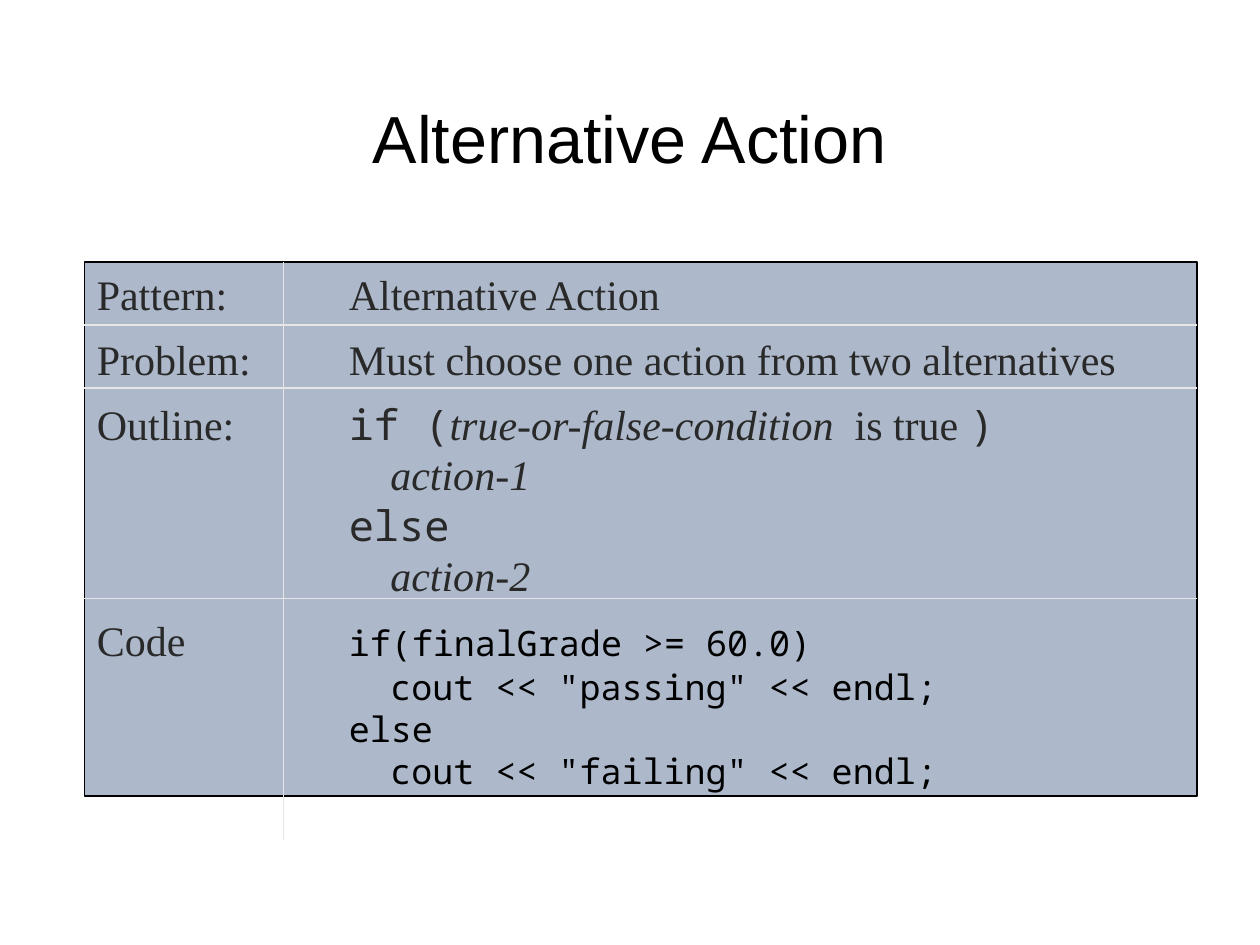
import pptx
import pptx.dml.color
import pptx.enum.shapes
import pptx.enum.text
import pptx.oxml.ns
import pptx.util
from pptx.util import Inches

COLORS = {"black": "000000", "ink": "292929", "panel": "ADB9CA", "rule": "E7E6E6"}
SERIF, MONO = "Times New Roman", "Noto Sans Mono"
LABEL = {"name": SERIF, "size": 24, "color": "ink"}
PLACEHOLDER = {**LABEL, "italic": True}
KEYWORD = {**LABEL, "name": MONO}
CODE = {"name": MONO, "size": 20, "color": "black"}
TITLE = {"name": "Arial", "size": 38, "color": "black"}
LEFT, TOP, WIDTH, HEIGHT = 0.67, 2.08, 8.83, 4.24
CONTENT_INDENT, NESTED_INDENT = 2, 2.33

ROWS = [
    [(0, [("Pattern:\tAlternative Action", LABEL)])],
    [(0, [("Problem:\tMust choose one action from two alternatives", LABEL)])],
    [
        (0, [("Outline:\t", LABEL), ("if (", KEYWORD),
             ("true-or-false-condition", PLACEHOLDER),
             ("  is true ", LABEL), (")", KEYWORD)]),
        (NESTED_INDENT, [("action-1", PLACEHOLDER)]),
        (CONTENT_INDENT, [("else", KEYWORD)]),
        (NESTED_INDENT, [("action-2", PLACEHOLDER)]),
    ],
    [
        (0, [("Code\t", LABEL), ("if(finalGrade >= 60.0)", CODE)]),
        (NESTED_INDENT, [('cout << "passing" << endl;', CODE)]),
        (CONTENT_INDENT, [("else", CODE)]),
        (NESTED_INDENT, [('cout << "failing" << endl;', CODE)]),
    ],
]


def rgb(color):
    """Return the named colour."""
    return pptx.dml.color.RGBColor.from_string(COLORS[color])


def add_run(paragraph, text, style):
    """Append text formatted from a style dict."""
    run = paragraph.add_run()
    run.text = text
    for attribute, value in style.items():
        if attribute == "color":
            run.font.color.rgb = rgb(value)
        else:
            setattr(run.font, attribute, pptx.util.Pt(value) if attribute == "size" else value)


def set_title(slide, text):
    """Place and format the title placeholder."""
    title = slide.shapes.title
    bounds = {"left": 0.69, "top": 0.4, "width": 8.62, "height": 1.45}
    for attribute, value in bounds.items():
        setattr(title, attribute, Inches(value))
    title.text_frame.vertical_anchor = pptx.enum.text.MSO_ANCHOR.MIDDLE
    heading = title.text_frame.paragraphs[0]
    heading.alignment = pptx.enum.text.PP_ALIGN.CENTER
    heading.line_spacing = 0.9
    add_run(heading, text, TITLE)


def add_line(paragraph, indent, runs, space_before):
    """Fill one line, hanging its label left of the content when indent is zero."""
    properties = paragraph._p.get_or_add_pPr()
    properties.set("marL", str(Inches(indent or CONTENT_INDENT)))
    properties.set("indent", str(0 if indent else -Inches(CONTENT_INDENT)))
    paragraph.alignment = pptx.enum.text.PP_ALIGN.LEFT
    paragraph.space_before = pptx.util.Pt(space_before)
    for text, style in runs:
        add_run(paragraph, text, style)


def add_pattern_panel(slide):
    """Draw the panel that holds the pattern description."""
    panel = slide.shapes.add_shape(
        pptx.enum.shapes.MSO_SHAPE.RECTANGLE,
        Inches(LEFT), Inches(TOP), Inches(WIDTH), Inches(HEIGHT))
    panel.shadow.inherit = False
    panel.fill.solid()
    panel.fill.fore_color.rgb = rgb("panel")
    panel.line.color.rgb = rgb("black")
    panel.line.width = pptx.util.Pt(1)
    frame = panel.text_frame
    frame.word_wrap = True
    frame.vertical_anchor = pptx.enum.text.MSO_ANCHOR.TOP
    for row_index, row in enumerate(ROWS):
        for line_index, (indent, runs) in enumerate(row):
            first = row_index == line_index == 0
            paragraph = frame.paragraphs[0] if first else frame.add_paragraph()
            add_line(paragraph, indent, runs, 8.4 if row_index and not line_index else 0)


def add_rule(slide, start, end):
    """Draw a thin divider between two points."""
    rule = slide.shapes.add_connector(
        pptx.enum.shapes.MSO_CONNECTOR.STRAIGHT, *map(Inches, start + end))
    rule.line.color.rgb = rgb("rule")
    rule.line.width = pptx.util.Pt(1)
    properties = rule._element.spPr
    properties.append(properties.makeelement(pptx.oxml.ns.qn("a:effectLst"), {}))


def main():
    """Build and save the slide."""
    deck = pptx.Presentation()
    deck.slide_width, deck.slide_height = Inches(10), Inches(7.5)
    slide = deck.slides.add_slide(deck.slide_layouts[5])
    set_title(slide, "Alternative Action")
    add_pattern_panel(slide)
    add_rule(slide, (2.25, TOP), (2.25, 6.67))
    for height in (3.08, 4.75, 2.58):
        add_rule(slide, (LEFT + WIDTH, height), (LEFT, height))
    deck.save("out.pptx")


if __name__ == "__main__":
    main()
